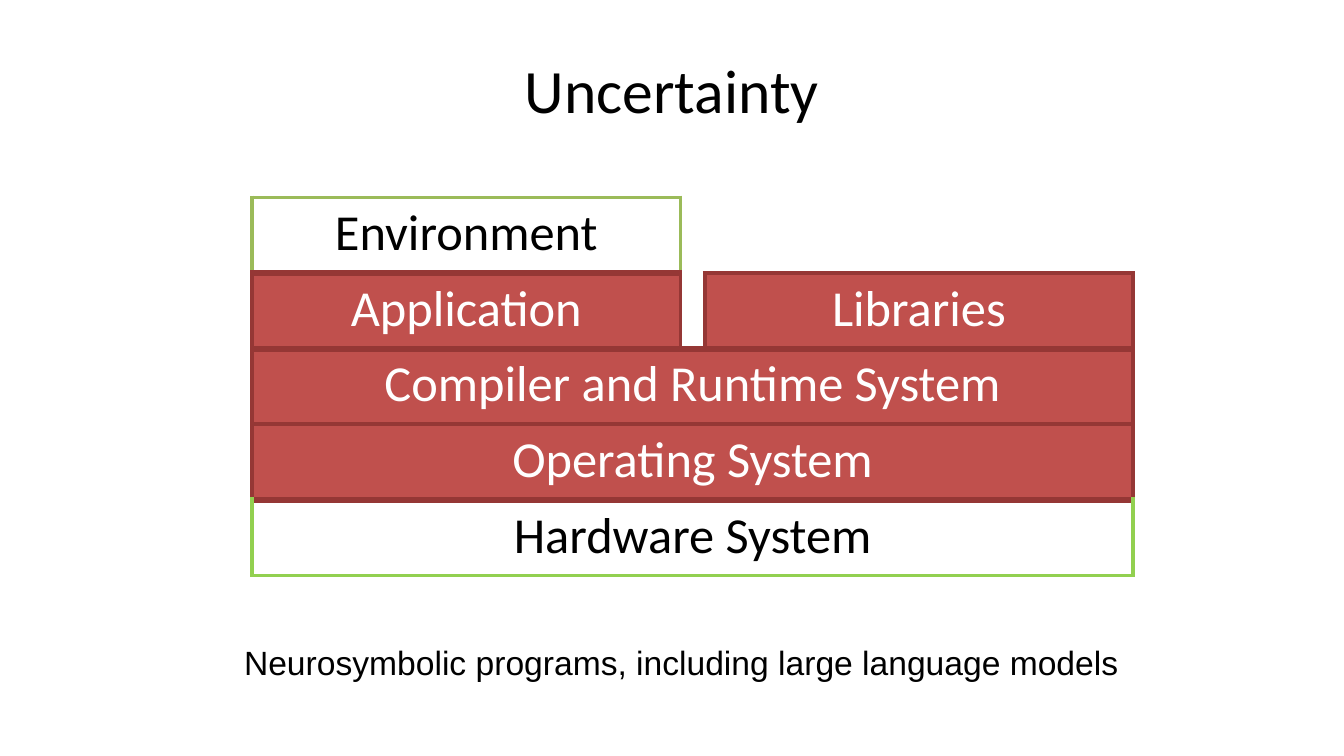
from dataclasses import dataclass

from lxml.etree import SubElement
from pptx import Presentation
from pptx.dml.color import RGBColor
from pptx.enum.text import PP_ALIGN
from pptx.oxml.ns import qn
from pptx.util import Inches, Pt


@dataclass(frozen=True)
class Theme:
    ink: str = "000000"
    white: str = "FFFFFF"
    red: str = "C0504D"
    maroon: str = "953735"
    olive: str = "9BBB59"
    green: str = "92D050"
    heading_font: str = "Calibri"
    note_font: str = "Arial"
    title_size: int = 44
    layer_size: int = 36
    note_size: int = 24


theme = Theme()


def write_text(frame, words, font, size, color, align, top_inset, space):
    """Fill a text frame with one line that has no inset except at the top."""
    frame.word_wrap = True
    frame.margin_left = frame.margin_right = frame.margin_bottom = 0
    frame.margin_top = Inches(top_inset)
    para = frame.paragraphs[0]
    para.alignment = align
    para.space_before = Pt(space)
    span = para.add_run()
    span.text = words
    span.font.name = font
    span.font.size = Pt(size)
    span.font.color.rgb = RGBColor.from_string(color)


def draw_borders(cell, edges):
    """Set left, right, top and bottom edges, each (colour, points) or None."""
    properties = cell._tc.get_or_add_tcPr()
    for position, (tag, edge) in enumerate(zip(("lnL", "lnR", "lnT", "lnB"), edges)):
        line = SubElement(properties, qn(f"a:{tag}"))
        properties.insert(position, line)
        if edge is None:
            SubElement(line, qn("a:noFill"))
            continue
        color, width = edge
        line.set("w", str(Pt(width)))
        fill = SubElement(line, qn("a:solidFill"))
        SubElement(fill, qn("a:srgbClr")).set("val", color)


deck = Presentation()
deck.slide_width, deck.slide_height = Inches(13.33), Inches(7.5)
page = deck.slides.add_slide(deck.slide_layouts[6])

title = page.shapes.add_textbox(Inches(0.57), Inches(0.36), Inches(12.19), Inches(1.1))
write_text(title.text_frame, "Uncertainty", theme.heading_font, theme.title_size,
           theme.ink, PP_ALIGN.CENTER, 0.16, 1)

column_widths = (4.25, 0.2, 4.25)
row_height = 0.75
row_count = 5
stack = page.shapes.add_table(
    row_count, len(column_widths), Inches(2.5), Inches(1.96),
    Inches(sum(column_widths)), Inches(row_height * row_count)).table
stack.first_row = stack.horz_banding = False
for column, width in zip(stack.columns, column_widths):
    column.width = Inches(width)

olive, green, maroon = (theme.olive, 3), (theme.green, 3), (theme.maroon, 3)
thick = (theme.maroon, 4.5)

# row, first column, last column, words, fill, space before, edges (left, right, top, bottom)
layers = (
    (0, 0, 0, "Environment", None, 3.5, (olive, olive, olive, thick)),
    (0, 1, 2, "", None, 0, (olive, None, None, maroon)),
    (1, 0, 0, "Application", theme.red, 4, (maroon, maroon, thick, thick)),
    (1, 1, 1, "", None, 0, (maroon, maroon, None, thick)),
    (1, 2, 2, "Libraries", theme.red, 3.7, (maroon, maroon, maroon, thick)),
    (2, 0, 2, "Compiler and Runtime System", theme.red, 3.3, (maroon, maroon, thick, maroon)),
    (3, 0, 2, "Operating System", theme.red, 3.3, (maroon, maroon, maroon, thick)),
    (4, 0, 2, "Hardware System", None, 3.7, (green, green, thick, green)),
)
for row, first, last, words, fill, space, edges in layers:
    # The gap column stays open above, so only the Libraries column carries its top edge.
    for column in range(first, last + 1):
        cell = stack.cell(row, column)
        if fill:
            cell.fill.solid()
            cell.fill.fore_color.rgb = RGBColor.from_string(fill)
        else:
            cell.fill.background()
        open_gap = row == 0 and column == 1
        draw_borders(cell, edges[:3] + (None,) if open_gap else edges)
    if last > first:
        stack.cell(row, first).merge(stack.cell(row, last))
    if words:
        write_text(stack.cell(row, first).text_frame, words, theme.heading_font,
                   theme.layer_size, theme.white if fill else theme.ink,
                   PP_ALIGN.CENTER, 0.05, space)

note = page.shapes.add_textbox(Inches(2.42), Inches(6.36), Inches(8.71), Inches(0.43))
write_text(note.text_frame, "Neurosymbolic programs, including large language models",
           theme.note_font, theme.note_size, theme.ink, PP_ALIGN.LEFT, 0.01, 1)

deck.save("out.pptx")
